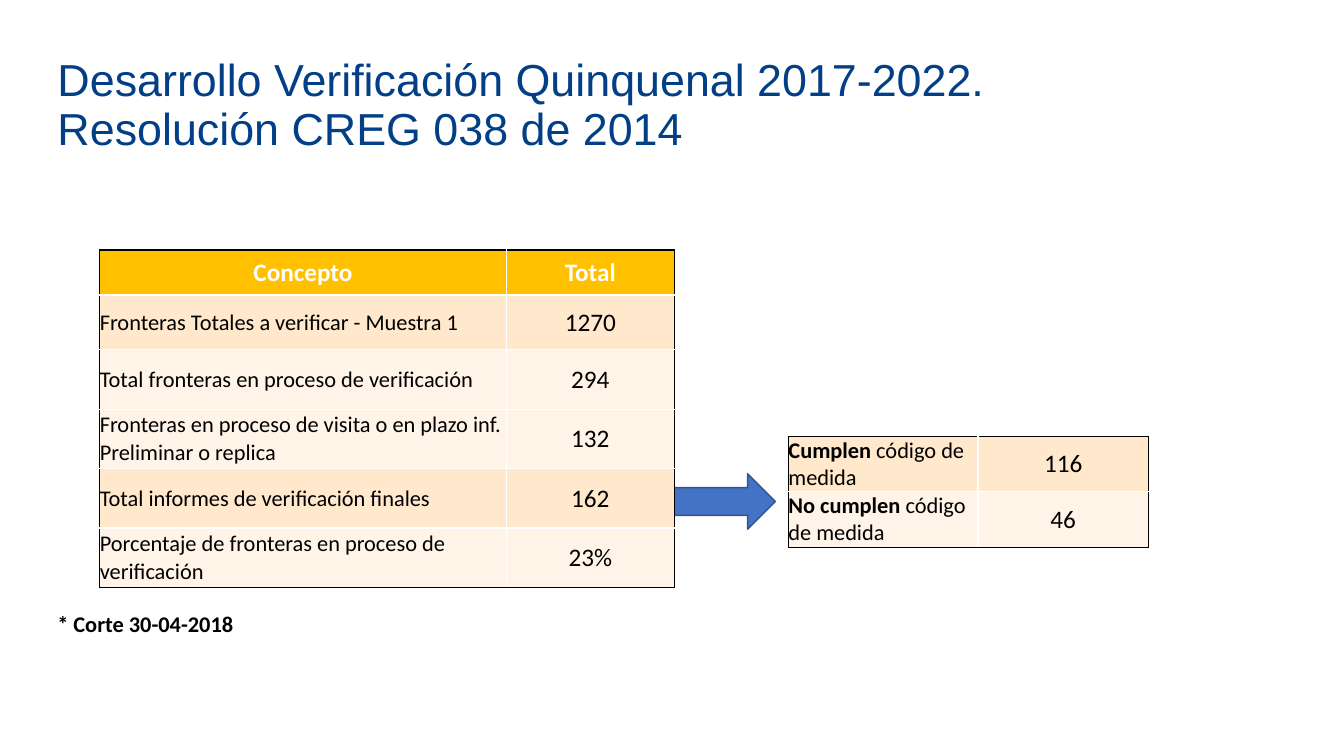
import pptx
import pptx.util
import pptx.dml.color
import pptx.enum.shapes
import pptx.enum.text
import pptx.oxml
import pptx.oxml.ns

RGBColor = pptx.dml.color.RGBColor
ALIGN = pptx.enum.text.PP_ALIGN
MIDDLE = pptx.enum.text.MSO_ANCHOR.MIDDLE

NAVY = RGBColor(0x02, 0x3F, 0x86)
BLACK = RGBColor(0, 0, 0)
WHITE = RGBColor(0xFF, 0xFF, 0xFF)
GOLD = RGBColor(0xFF, 0xC0, 0x00)
PEACH = RGBColor(0xFF, 0xE8, 0xCB)
CREAM = RGBColor(0xFF, 0xF4, 0xE7)
BLUE = RGBColor(0x44, 0x72, 0xC4)
DARK_BLUE = RGBColor(0x32, 0x54, 0x91)

TITLE = "Desarrollo Verificación Quinquenal 2017-2022. Resolución CREG 038 de 2014"
CUTOFF = "* Corte 30-04-2018"

# Each row: fill, bold lead of the label, rest of the label, value
PROGRESS = [
    (GOLD, "Concepto", "", "Total"),
    (PEACH, "", "Fronteras Totales a verificar - Muestra 1", "1270"),
    (CREAM, "", "Total fronteras en proceso de verificación", "294"),
    (CREAM, "", "Fronteras en proceso de visita o en plazo inf. Preliminar o replica", "132"),
    (PEACH, "", "Total informes de verificación finales", "162"),
    (CREAM, "", "Porcentaje de fronteras en proceso de verificación", "23%"),
]
COMPLIANCE = [
    (PEACH, "Cumplen", " código de medida", "116"),
    (CREAM, "No cumplen ", "código de medida", "46"),
]

# Lengths in px, 100 to the inch
PX = 9144
SLIDE_SIZE = (1333, 750)
TITLE_BOX = (47, 52, 970, 107)
CUTOFF_BOX = (47, 600, 297, 37)
ARROW_BOX = (669, 470, 100, 55)


def px(*lengths):
    return [length * PX for length in lengths]


def write(frame, *pieces, size, color=BLACK, font="Calibri", align=ALIGN.LEFT, spacing=None):
    """Fill the first paragraph with (text, bold) pieces."""
    paragraph = frame.paragraphs[0]
    paragraph.alignment = align
    if spacing:
        paragraph.line_spacing = spacing
    for text, bold in pieces:
        if text:
            run = paragraph.add_run()
            run.text = text
            run.font.name = font
            run.font.size = pptx.util.Pt(size)
            run.font.bold = bold
            run.font.color.rgb = color


def set_borders(cell, borders):
    """Put (side, colour, points) lines ahead of the cell fill, in schema order."""
    properties = cell._tc.get_or_add_tcPr()
    for position, (side, color, points) in enumerate(borders):
        properties.insert(position, pptx.oxml.parse_xml(
            f'<a:ln{side} {pptx.oxml.ns.nsdecls("a")} w="{int(points * 12700)}">'
            f'<a:solidFill><a:srgbClr val="{color}"/></a:solidFill></a:ln{side}>'))


def add_summary(slide, rows, left, top, widths, heights, has_header=False):
    """Two-column table with a black frame and white inner lines."""
    frame = slide.shapes.add_table(
        len(rows), 2, *px(left, top, sum(widths), sum(heights)))
    table = frame.table
    table.first_row = has_header
    table.horz_banding = False
    for column, width in zip(table.columns, widths):
        column.width = width * PX
    for r, (fill, lead, rest, value) in enumerate(rows):
        table.rows[r].height = heights[r] * PX
        header = has_header and r == 0
        label_format = dict(size=18, color=WHITE, align=ALIGN.CENTER) if header else dict(size=16)
        value_format = dict(size=18, color=WHITE if header else BLACK, align=ALIGN.CENTER)
        contents = [([(lead, True), (rest, False)], label_format),
                    ([(value, header)], value_format)]
        for c, (pieces, text_format) in enumerate(contents):
            cell = table.cell(r, c)
            cell.margin_left = cell.margin_right = cell.margin_top = cell.margin_bottom = 0
            cell.vertical_anchor = MIDDLE
            cell.fill.solid()
            cell.fill.fore_color.rgb = fill
            write(cell.text_frame, *pieces, **text_format)
            set_borders(cell, [
                ("L", BLACK if c == 0 else WHITE, 1),
                ("R", BLACK if c == 1 else WHITE, 1),
                ("T", BLACK if r == 0 else WHITE, 1.5 if has_header and r == 1 else 1),
                ("B", BLACK if r == len(rows) - 1 else WHITE, 1.5 if header else 1),
            ])


def main():
    deck = pptx.Presentation()
    deck.slide_width, deck.slide_height = px(*SLIDE_SIZE)
    slide = deck.slides.add_slide(deck.slide_layouts[5])

    title = slide.shapes.title
    title.left, title.top, title.width, title.height = px(*TITLE_BOX)
    title.text_frame.auto_size = pptx.enum.text.MSO_AUTO_SIZE.NONE
    title.text_frame.vertical_anchor = MIDDLE
    write(title.text_frame, (TITLE, False), size=32, color=NAVY, font="Arial", spacing=0.9)

    cutoff = slide.shapes.add_textbox(*px(*CUTOFF_BOX))
    cutoff.text_frame.word_wrap = True
    write(cutoff.text_frame, (CUTOFF, True), size=16)

    arrow = slide.shapes.add_shape(
        pptx.enum.shapes.MSO_SHAPE.RIGHT_ARROW, *px(*ARROW_BOX))
    arrow.shadow.inherit = False
    arrow.fill.solid()
    arrow.fill.fore_color.rgb = BLUE
    arrow.line.color.rgb = DARK_BLUE
    arrow.line.width = pptx.util.Pt(1)

    add_summary(slide, PROGRESS, 99, 248, (403, 167), (45, 54) + (59,) * 4, has_header=True)
    add_summary(slide, COMPLIANCE, 782, 433, (188, 169), (55, 55))

    deck.save("out.pptx")


if __name__ == "__main__":
    main()
